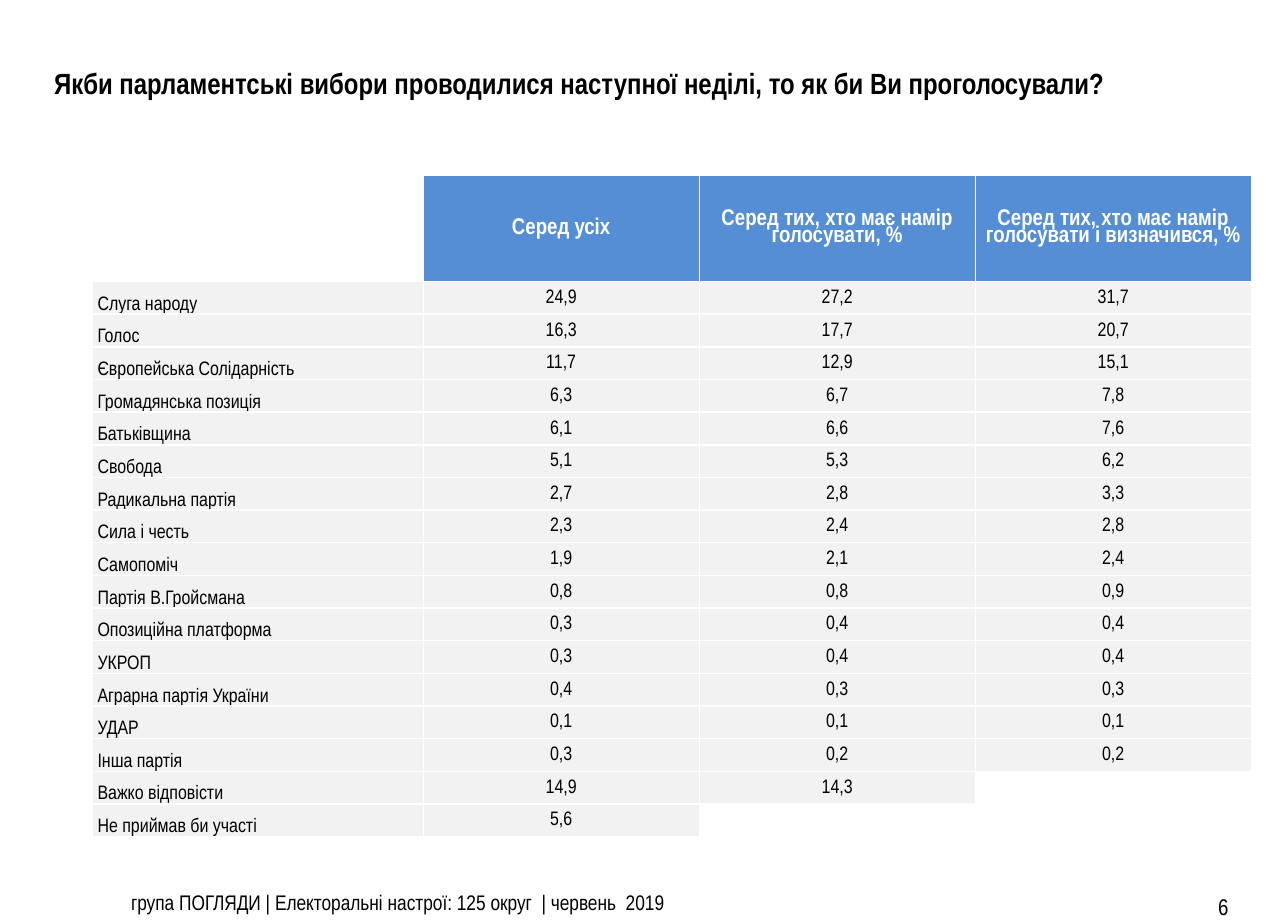
from lxml import etree
from pptx import Presentation
from pptx import util as u
from pptx.dml.color import RGBColor
from pptx.enum import text
from pptx.oxml.ns import qn

FONT = "Arial Narrow"
BLACK, WHITE, BLUE, GREY = "000000", "FFFFFF", "558ED5", "F2F2F2"
LEFT, CENTER = text.PP_ALIGN.LEFT, text.PP_ALIGN.CENTER
TOP, MIDDLE, BOTTOM = text.MSO_ANCHOR.TOP, text.MSO_ANCHOR.MIDDLE, text.MSO_ANCHOR.BOTTOM

HEADERS = ["", "Серед усіх", "Серед тих, хто має намір голосувати, %",
           "Серед тих, хто має намір голосувати і визначився, %"]
RESULTS = [
    ("Слуга народу", "24,9", "27,2", "31,7"),
    ("Голос", "16,3", "17,7", "20,7"),
    ("Європейська Солiдарнiсть", "11,7", "12,9", "15,1"),
    ("Громадянська позицiя", "6,3", "6,7", "7,8"),
    ("Батькiвщина", "6,1", "6,6", "7,6"),
    ("Свобода", "5,1", "5,3", "6,2"),
    ("Радикальна партiя", "2,7", "2,8", "3,3"),
    ("Сила i честь", "2,3", "2,4", "2,8"),
    ("Самопомiч", "1,9", "2,1", "2,4"),
    ("Партiя В.Гройсмана", "0,8", "0,8", "0,9"),
    ("Опозицiйна платформа", "0,3", "0,4", "0,4"),
    ("УКРОП", "0,3", "0,4", "0,4"),
    ("Аграрна партiя України", "0,4", "0,3", "0,3"),
    ("УДАР", "0,1", "0,1", "0,1"),
    ("Iнша партiя", "0,3", "0,2", "0,2"),
    ("Важко вiдповiсти", "14,9", "14,3", ""),
    ("Не приймав би участi", "5,6", "", ""),
]


def color(value):
    return RGBColor.from_string(value)


def add_run(paragraph, words, size, ink=BLACK, bold=False):
    run = paragraph.add_run()
    run.text = words
    run.font.name = FONT
    run.font.size = u.Pt(size)
    run.font.bold = bold
    run.font.color.rgb = color(ink)


def add_label(slide, words, left, top, width, height, size,
              align=LEFT, anchor=MIDDLE, bold=False, side=0.28):
    box = slide.shapes.add_textbox(u.Cm(left), u.Cm(top), u.Cm(width), u.Cm(height))
    frame = box.text_frame
    frame.word_wrap = True
    frame.vertical_anchor = anchor
    frame.margin_left = frame.margin_right = u.Cm(side)
    frame.margin_top = frame.margin_bottom = u.Cm(0.13)
    paragraph = frame.paragraphs[0]
    paragraph.alignment = align
    add_run(paragraph, words, size, bold=bold)


def add_borders(cell):
    properties = cell._tc.get_or_add_tcPr()
    for side in ("a:lnL", "a:lnR", "a:lnT", "a:lnB"):
        line = etree.SubElement(properties, qn(side), w=str(u.Pt(1)))
        fill = etree.SubElement(line, qn("a:solidFill"))
        etree.SubElement(fill, qn("a:srgbClr"), val=WHITE)


def fill_cell(cell, words, is_header, is_name):
    cell.margin_left = cell.margin_right = cell.margin_top = u.Cm(0.02)
    cell.margin_bottom = 0
    cell.vertical_anchor = BOTTOM if is_name else MIDDLE
    add_borders(cell)
    paragraph = cell.text_frame.paragraphs[0]
    if not words:
        # A small end mark keeps an empty cell from stretching its row
        cell.fill.background()
        etree.SubElement(paragraph._p, qn("a:endParaRPr"), sz="1200")
        return
    cell.fill.solid()
    cell.fill.fore_color.rgb = color(BLUE if is_header else GREY)
    paragraph.alignment = LEFT if is_name else CENTER
    if is_name:
        paragraph._p.get_or_add_pPr().set("marL", str(u.Cm(0.1)))
    if is_header:
        paragraph.line_spacing = 0.8
        add_run(paragraph, words, 14, WHITE, True)
    else:
        add_run(paragraph, words, 12)


def add_results_table(slide):
    rows = [HEADERS, *RESULTS]
    widths = [7.2] + [6] * 3
    heights = [2.31] + [0.71] * len(RESULTS)
    table = slide.shapes.add_table(len(rows), len(widths), u.Cm(2), u.Cm(3.81),
                                   u.Cm(sum(widths)), u.Cm(sum(heights))).table
    table.first_row = table.horz_banding = False
    for column, width in zip(table.columns, widths):
        column.width = u.Cm(width)
    for row, height in zip(table.rows, heights):
        row.height = u.Cm(height)
    for i, row in enumerate(rows):
        for j, words in enumerate(row):
            fill_cell(table.cell(i, j), words, i == 0, j == 0)


def main():
    presentation = Presentation()
    presentation.slide_width = u.Cm(28)
    presentation.slide_height = u.Cm(20)
    slide = presentation.slides.add_slide(presentation.slide_layouts[6])

    # Footer and page number
    add_label(slide, "група ПОГЛЯДИ | Електоральні настрої: 125 округ  | червень  2019",
              2.6, 19.2, 17.3, 0.8, 13, anchor=TOP, side=0.25)
    add_label(slide, "6", 26.2, 19.4, 1.37, 0.6, 14)

    # Question
    add_label(slide, "Якби парламентські вибори проводилися наступної неділі, "
              "то як би Ви проголосували?", 0, 1.2, 25.2, 1.2, 18, CENTER, bold=True)

    # Party results
    add_results_table(slide)
    presentation.save("out.pptx")


if __name__ == "__main__":
    main()
